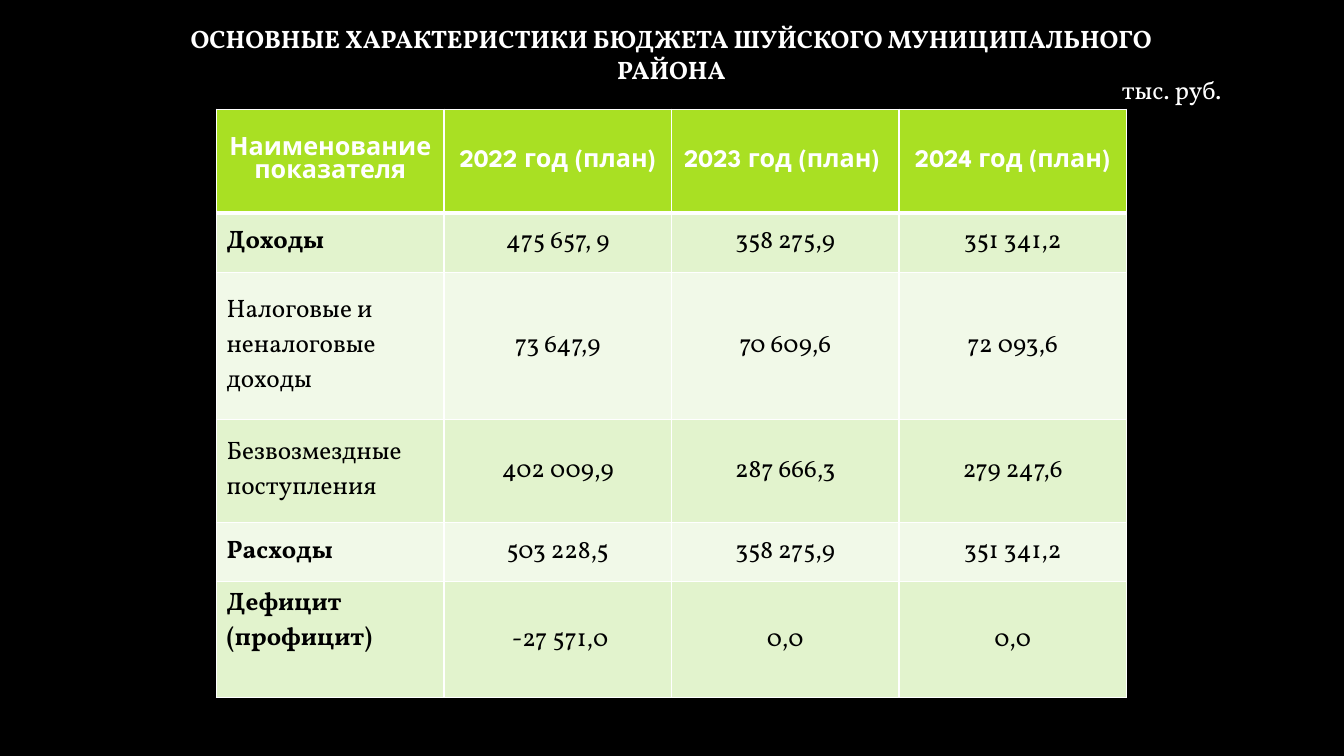
from dataclasses import dataclass

from lxml import etree
from pptx import Presentation
from pptx import util as u
from pptx.dml.color import RGBColor
from pptx.enum import text
from pptx.oxml import ns

WHITE, BLACK, LIME = "FFFFFF", "000000", "A9E023"
BANDS = ("E2F3CD", "F1F9E8")
HEADING_FONT, BODY_FONT = "League Spartan", "Vollkorn"
LEFT, CENTER = text.PP_ALIGN.LEFT, text.PP_ALIGN.CENTER
MIDDLE, TOP = text.MSO_ANCHOR.MIDDLE, text.MSO_ANCHOR.TOP

COLUMN_WIDTH = 162.5
YEARS = ("2022 год (план)", "2023 год (план) ", "2024 год (план)")


@dataclass(frozen=True)
class BudgetLine:
    label: str
    amounts: tuple[str, str, str]
    height: float
    bold: bool = False
    label_anchor: text.MSO_ANCHOR = MIDDLE


@dataclass(frozen=True)
class Caption:
    wording: str
    left: float
    top: float
    width: float
    height: float
    align: text.PP_ALIGN
    bold: bool


HEADING = BudgetLine("Наименование показателя", YEARS, 74, True)
BUDGET = (
    BudgetLine("Доходы", ("475 657, 9", "358 275,9", "351 341,2"), 42.5, True),
    BudgetLine("Налоговые и неналоговые доходы", ("73 647,9", "70 609,6", "72 093,6"), 105),
    BudgetLine("Безвозмездные поступления", ("402 009,9", "287 666,3", "279 247,6"), 73.5),
    BudgetLine("Расходы", ("503 228,5", "358 275,9", "351 341,2"), 42.5, True),
    BudgetLine("Дефицит (профицит)", (" -27 571,0", "0,0", "0,0"), 83, True, TOP),
)
CAPTIONS = (
    Caption("ОСНОВНЫЕ ХАРАКТЕРИСТИКИ БЮДЖЕТА ШУЙСКОГО МУНИЦИПАЛЬНОГО РАЙОНА",
            103.7, 13, 751.7, 51, CENTER, True),
    Caption("тыс. руб.", 794.2, 49, 111.6, 28.8, LEFT, False),
)


def rgb(code: str) -> RGBColor:
    return RGBColor.from_string(code)


def write(frame, wording: str, color: str, align, line_pitch: float | None = None,
          **font_format) -> None:
    paragraph = frame.paragraphs[0]
    paragraph.alignment = align
    if line_pitch:
        paragraph.line_spacing = u.Pt(line_pitch)
    run = paragraph.add_run()
    run.text = wording
    for name, value in {"size": u.Pt(18), "name": BODY_FONT, **font_format}.items():
        setattr(run.font, name, value)
    run.font.color.rgb = rgb(color)


def add_borders(cell, top: float, bottom: float) -> None:
    properties = cell._tc.get_or_add_tcPr()
    for side, width in {"L": 1, "R": 1, "T": top, "B": bottom}.items():
        border = etree.SubElement(properties, ns.qn(f"a:ln{side}"), w=str(u.Pt(width)))
        fill = etree.SubElement(border, ns.qn("a:solidFill"))
        etree.SubElement(fill, ns.qn("a:srgbClr"), val=WHITE)


def add_budget_table(slide) -> None:
    lines = (HEADING, *BUDGET)
    columns = 1 + len(YEARS)
    budget = slide.shapes.add_table(
        len(lines), columns, u.Pt(154.7), u.Pt(78),
        u.Pt(COLUMN_WIDTH * columns), u.Pt(sum(line.height for line in lines))).table
    for column in budget.columns:
        column.width = u.Pt(COLUMN_WIDTH)
    for row, line in enumerate(lines):
        budget.rows[row].height = u.Pt(line.height)
        heading = line is HEADING
        for column, wording in enumerate((line.label, *line.amounts)):
            cell = budget.cell(row, column)
            is_label = column == 0
            add_borders(cell, 3 if row == 1 else 1, 3 if heading else 1)
            cell.fill.solid()
            cell.fill.fore_color.rgb = rgb(LIME if heading else BANDS[(row - 1) % 2])
            cell.vertical_anchor = line.label_anchor if is_label else MIDDLE
            if heading:
                write(cell.text_frame, wording, WHITE, CENTER, name=HEADING_FONT, bold=True)
            else:
                write(cell.text_frame, wording, BLACK, LEFT if is_label else CENTER, 25,
                      bold=line.bold and is_label)


def add_caption(slide, caption: Caption) -> None:
    box = slide.shapes.add_textbox(*map(
        u.Pt, (caption.left, caption.top, caption.width, caption.height)))
    box.text_frame.word_wrap = True
    write(box.text_frame, caption.wording, WHITE, caption.align, 22, bold=caption.bold)


def main() -> None:
    deck = Presentation()
    deck.slide_width, deck.slide_height = u.Pt(960), u.Pt(540)
    slide = deck.slides.add_slide(deck.slide_layouts[6])
    slide.background.fill.solid()
    slide.background.fill.fore_color.rgb = rgb(BLACK)
    add_budget_table(slide)
    for caption in CAPTIONS:
        add_caption(slide, caption)
    deck.save("out.pptx")


if __name__ == "__main__":
    main()
